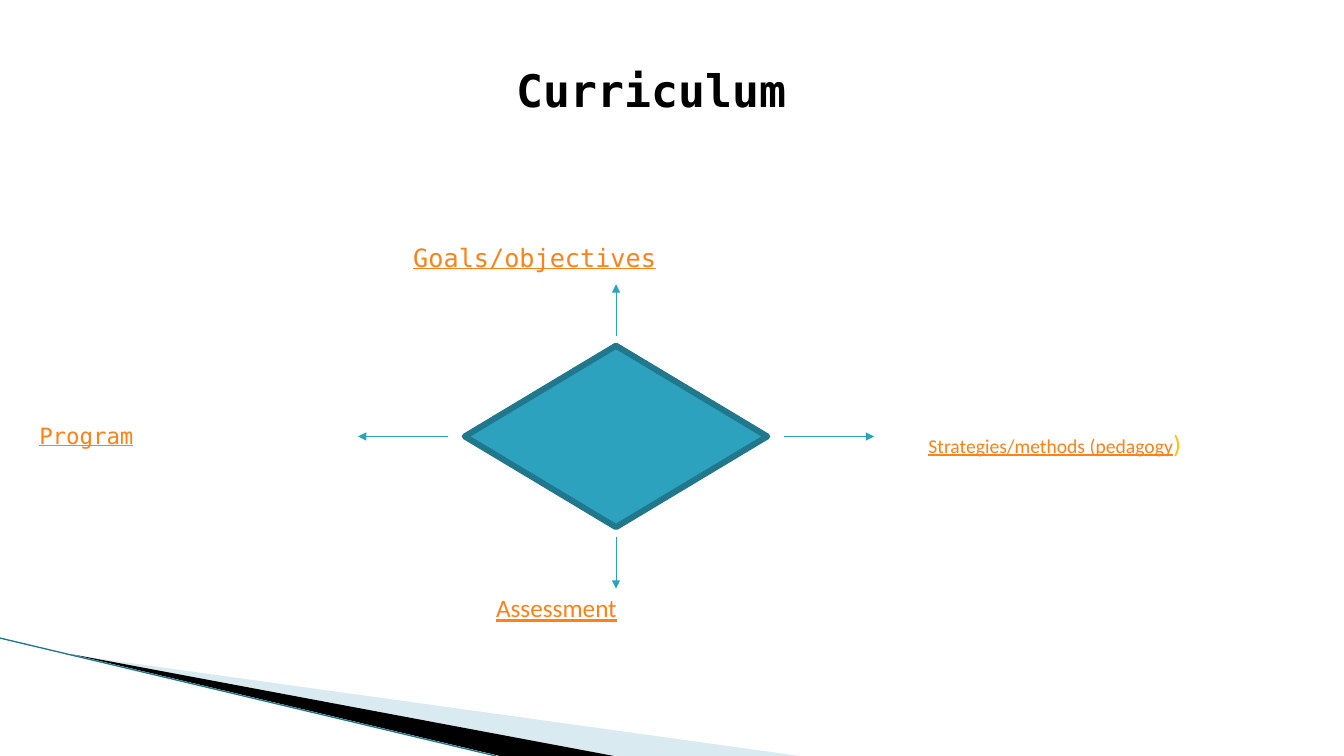
import pptx
import pptx.dml.color
import pptx.enum.shapes
import pptx.enum.text
import pptx.oxml
import pptx.oxml.ns
import pptx.util
from pptx.util import Inches

RGBColor = pptx.dml.color.RGBColor
BLACK = RGBColor(0x00, 0x00, 0x00)
ORANGE = RGBColor(0xFF, 0x81, 0x19)
GOLD = RGBColor(0xFF, 0xC0, 0x00)
TEAL = RGBColor(0x2D, 0xA2, 0xBF)
DARK = RGBColor(0x21, 0x78, 0x8D)
PALE = RGBColor(0xA0, 0xCB, 0xDC)
MONO = "DejaVu Sans Mono"
SANS = "Calibri"


def node(tag, **attrs):
    item = pptx.oxml.parse_xml(f"<a:{tag} {pptx.oxml.ns.nsdecls('a')}/>")
    for name, value in attrs.items():
        item.set(name, value)
    return item


class Board:
    def __init__(self, slide):
        self.slide = slide
        self.shapes = slide.shapes

    def frame(self, box, indent):
        frame = box.text_frame
        frame.word_wrap = True
        frame.auto_size = pptx.enum.text.MSO_AUTO_SIZE.NONE
        frame.vertical_anchor = pptx.enum.text.MSO_ANCHOR.TOP
        frame.margin_left = Inches(0.1 + indent)
        line = frame.paragraphs[0]
        line.alignment = pptx.enum.text.PP_ALIGN.LEFT
        return line

    def run(self, line, text, size, font, color, bold=False, under=False):
        run = line.add_run()
        run.text = text
        run.font.name = font
        run.font.size = pptx.util.Pt(size)
        run.font.color.rgb = color
        run.font.bold = bold
        run.font.underline = under

    def title(self, text, left, top, width, height, indent):
        box = self.shapes.title
        box.left, box.top = Inches(left), Inches(top)
        box.width, box.height = Inches(width), Inches(height)
        self.run(self.frame(box, indent), text, 32, MONO, BLACK, bold=True)

    def label(self, text, left, top, width, height, size, font, indent=0):
        box = self.shapes.add_textbox(
            Inches(left), Inches(top), Inches(width), Inches(height))
        line = self.frame(box, indent)
        self.run(line, text, size, font, ORANGE, under=True)
        return line

    def wedge(self, points, color, alpha=None):
        pen = self.shapes.build_freeform(
            Inches(points[0][0]), Inches(points[0][1]))
        pen.add_line_segments([(Inches(x), Inches(y)) for x, y in points[1:]])
        shape = pen.convert_to_shape()
        shape.shadow.inherit = False
        shape.fill.solid()
        shape.fill.fore_color.rgb = color
        shape.line.fill.background()
        if alpha:
            tint = shape.fill._xPr.find(".//" + pptx.oxml.ns.qn("a:srgbClr"))
            tint.append(node("alpha", val=str(alpha * 1000)))

    def diamond(self, left, top, width, height):
        shape = self.shapes.add_shape(
            pptx.enum.shapes.MSO_SHAPE.DIAMOND,
            Inches(left), Inches(top), Inches(width), Inches(height))
        shape.shadow.inherit = False
        shape.fill.solid()
        shape.fill.fore_color.rgb = TEAL
        shape.line.color.rgb = DARK
        shape.line.width = pptx.util.Pt(4.33)

    def line(self, start, end, color, width, arrow=False):
        link = self.shapes.add_connector(
            pptx.enum.shapes.MSO_CONNECTOR.STRAIGHT,
            *(Inches(value) for value in start + end))
        link.line.color.rgb = color
        link.line.width = pptx.util.Pt(width)
        if arrow:
            link.line._get_or_add_ln().append(node("tailEnd", type="triangle"))
        link._element.spPr.append(node("effectLst"))


def main():
    deck = pptx.Presentation()
    deck.slide_width, deck.slide_height = Inches(13.33), Inches(7.5)
    board = Board(deck.slides.add_slide(deck.slide_layouts[5]))

    board.wedge([(0.73, 6.5), (7.93, 7.5), (6.08, 7.5)], PALE, alpha=40)
    board.wedge([(0.71, 6.49), (6.09, 7.5), (4.96, 7.5)], BLACK)
    board.line((0, 6.33), (4.92, 7.5), DARK, 0.95)

    board.title("Curriculum", 4.22, 0.57, 5.39, 0.64, indent=0.8)
    board.label("Goals/objectives", 4, 2.35, 4.11, 0.71, 18, MONO)
    board.label("Program", 0.02, 4.14, 3.54, 0.37, 16, MONO, indent=0.27)
    plan = board.label(
        "Strategies/methods (pedagogy", 9.11, 4.15, 4.05, 0.45, 14, SANS)
    plan.line_spacing = 1.15
    plan.space_after = pptx.util.Pt(10)
    board.run(plan, ")", 18, SANS, GOLD)
    board.label("Assessment", 4.43, 5.83, 3.18, 0.4, 18, SANS, indent=0.39)

    mid_x, mid_y, width, height = 6.11, 4.33, 3, 1.8
    board.diamond(mid_x - width / 2, mid_y - height / 2, width, height)
    near_x, far_x = width / 2 + 0.17, width / 2 + 1.06
    near_y, far_y = height / 2 + 0.1, height / 2 + 0.61
    for way_x, way_y in ((0, -1), (1, 0), (-1, 0), (0, 1)):
        board.line(
            (mid_x + way_x * near_x, mid_y + way_y * near_y),
            (mid_x + way_x * far_x, mid_y + way_y * far_y),
            TEAL, 0.75, arrow=True)

    deck.save("out.pptx")


if __name__ == "__main__":
    main()
